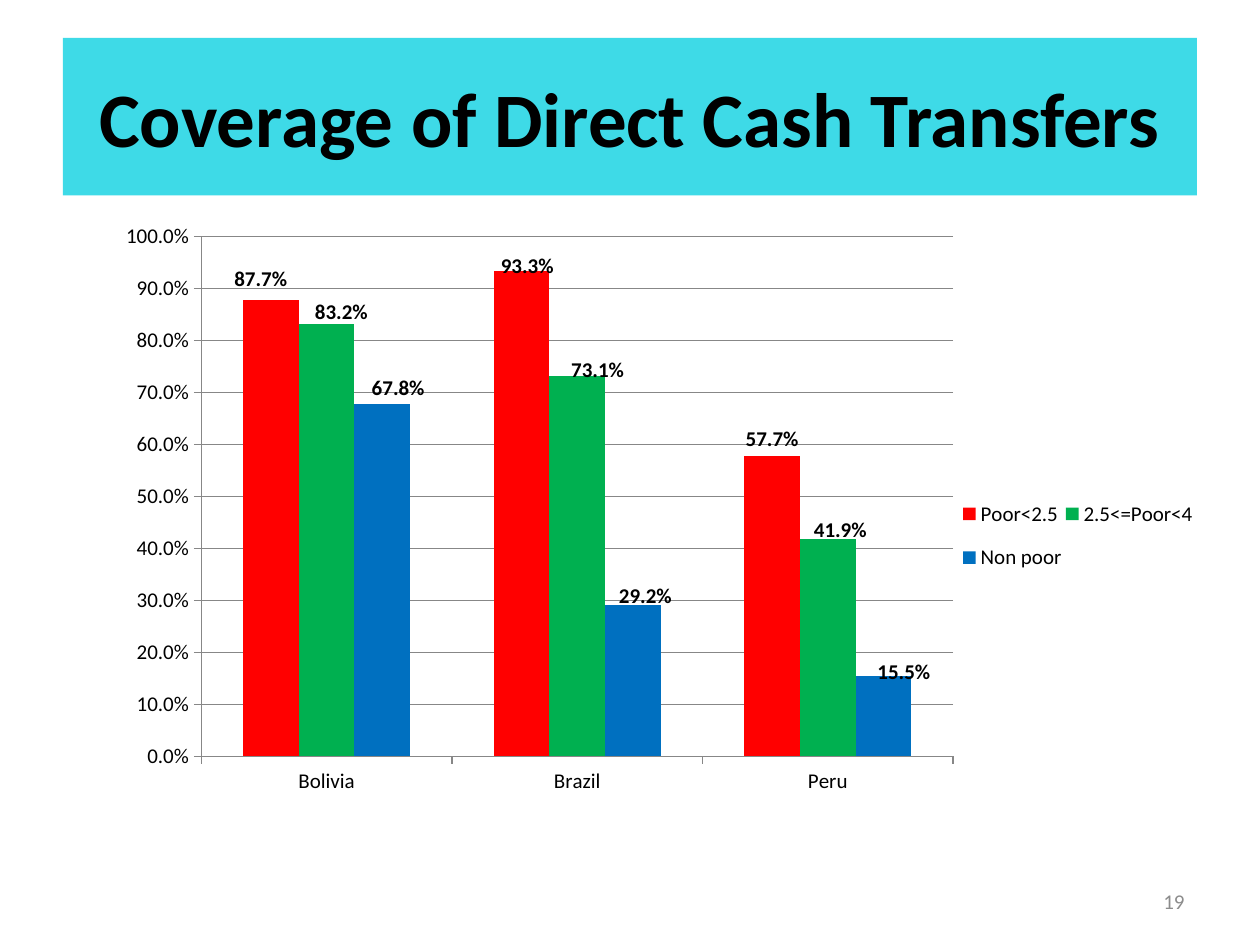
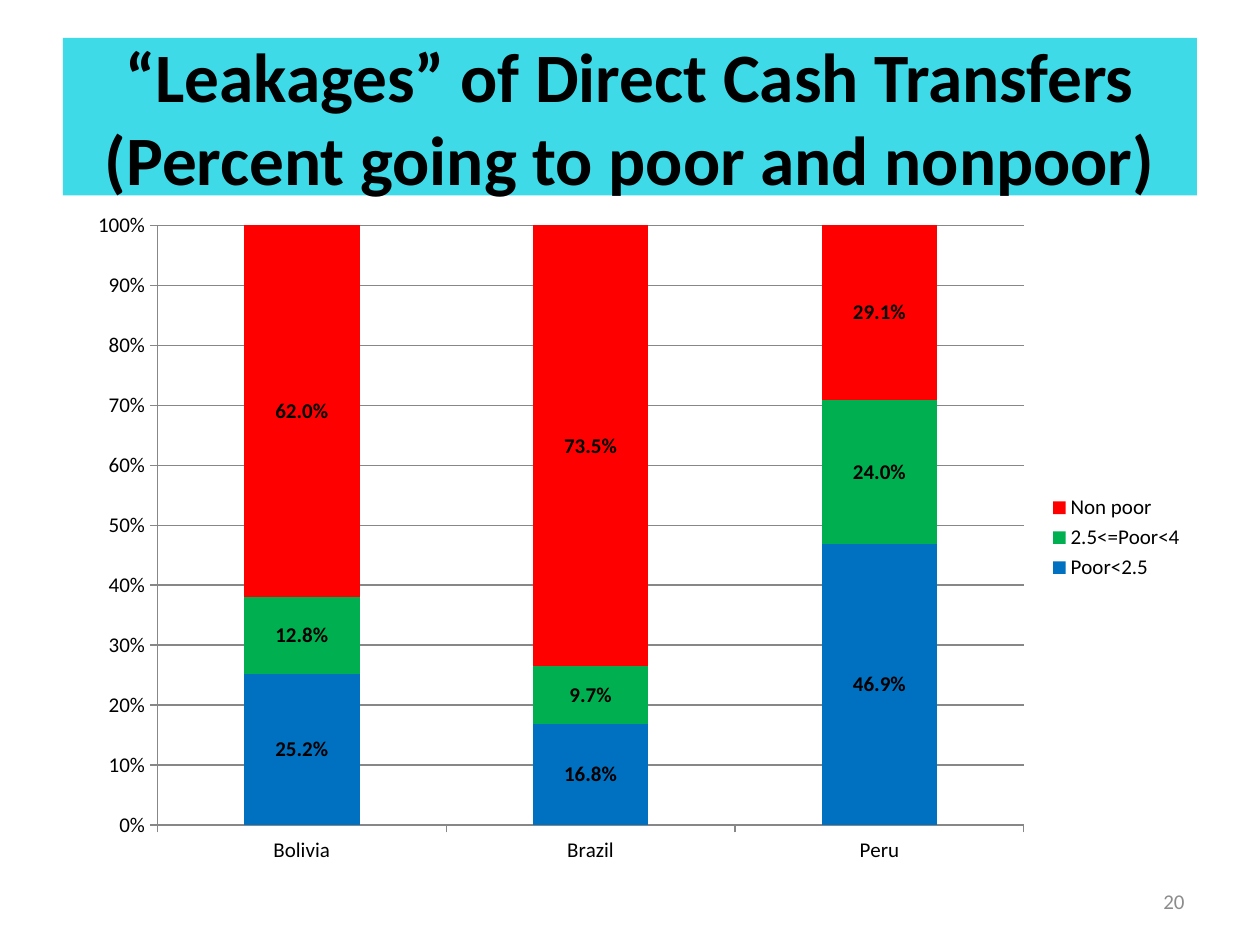
import pptx
import pptx.chart.data
import pptx.dml.color
import pptx.enum.chart
import pptx.enum.shapes
import pptx.enum.text
import pptx.oxml
import pptx.oxml.ns
import pptx.util
from dataclasses import dataclass

Pt = pptx.util.Pt
ALIGN = pptx.enum.text.PP_ALIGN
XL = pptx.enum.chart


@dataclass(frozen=True)
class Theme:
    font: str = "Calibri"
    band: str = "3EDAE7"
    ink: str = "000000"
    muted: str = "8C8C8C"
    line: str = "878787"
    red: str = "FF0000"
    green: str = "00B050"
    blue: str = "0070C0"
    title: float = 44
    title_small: float = 39.6
    small: float = 12


THEME = Theme()
COUNTRIES = ["Bolivia", "Brazil", "Peru"]


def rgb(value):
    return pptx.dml.color.RGBColor.from_string(value)


def apply(obj, **values):
    for name, value in values.items():
        setattr(obj, name, value)


def layout_xml(x, y, w=None, h=None, target=None, mode="edge"):
    """Manual chart layout; offsets only when mode is 'factor'."""
    parts = [("layoutTarget", target)]
    if mode == "edge":
        parts += [("xMode", mode), ("yMode", mode)]
    parts += [("x", x), ("y", y), ("w", w), ("h", h)]
    body = "".join(f'<c:{tag} val="{v}"/>' for tag, v in parts if v is not None)
    return pptx.oxml.parse_xml(f"<c:layout {pptx.oxml.ns.nsdecls('c')}>"
                               f"<c:manualLayout>{body}</c:manualLayout></c:layout>")


class Deck:
    def __init__(self, theme):
        self.theme = theme
        self.prs = pptx.Presentation()
        apply(self.prs, slide_width=Pt(720), slide_height=Pt(540))
        self.s = None

    def slide(self, title, size, number):
        self.s = self.prs.slides.add_slide(self.prs.slide_layouts[6])
        self.title(title, size)
        self.page_number(number)

    def font(self, font, size, color=None, bold=False):
        apply(font, name=self.theme.font, size=Pt(size), bold=bold)
        font.color.rgb = rgb(color or self.theme.ink)

    def text(self, sp, text, align, size, color, bold=False):
        tf = sp.text_frame
        apply(tf, word_wrap=True, vertical_anchor=pptx.enum.text.MSO_ANCHOR.MIDDLE)
        p = tf.paragraphs[0]
        apply(p, text=text, alignment=align)
        for r in p.runs:
            self.font(r.font, size, color, bold)

    def title(self, text, size):
        sp = self.s.shapes.add_shape(pptx.enum.shapes.MSO_SHAPE.RECTANGLE,
                                     Pt(36), Pt(21.6), Pt(648), Pt(90))
        sp.shadow.inherit = False
        sp.fill.solid()
        sp.fill.fore_color.rgb = rgb(self.theme.band)
        sp.line.fill.background()
        self.text(sp, text, ALIGN.CENTER, size, self.theme.ink, True)

    def page_number(self, number):
        sp = self.s.shapes.add_textbox(Pt(516), Pt(500.5), Pt(168), Pt(28.75))
        self.text(sp, str(number), ALIGN.RIGHT, self.theme.small, self.theme.muted)

    def chart(self, kind, box, series, axis_format):
        """Draw a column chart from (name, values, colour) rows."""
        data = pptx.chart.data.CategoryChartData(number_format="0.0%")
        data.categories = COUNTRIES
        for name, values, _ in series:
            data.add_series(name, values)
        chart = self.s.shapes.add_chart(kind, *map(Pt, box), data).chart
        chart.has_title = False
        self.font(chart.font, self.theme.small)

        # Axes and legend
        for axis in (chart.category_axis, chart.value_axis):
            apply(axis, major_tick_mark=XL.XL_TICK_MARK.OUTSIDE)
            self.line(axis.format.line)
            self.font(axis.tick_labels.font, self.theme.small)
        value = chart.value_axis
        apply(value, has_major_gridlines=True, minimum_scale=0, maximum_scale=1,
              major_unit=0.1)
        self.line(value.major_gridlines.format.line)
        apply(value.tick_labels, number_format=axis_format, number_format_is_linked=False)
        chart.has_legend = True
        apply(chart.legend, position=XL.XL_LEGEND_POSITION.RIGHT, include_in_layout=False)
        self.font(chart.legend.font, self.theme.small)

        # Columns and their labels
        plot = chart.plots[0]
        apply(plot, gap_width=150, vary_by_categories=False)
        for ser, (_, _, color) in zip(plot.series, series):
            ser.format.fill.solid()
            ser.format.fill.fore_color.rgb = rgb(color)
            labels = ser.data_labels
            apply(labels, show_value=True, number_format="0.0%",
                  number_format_is_linked=False)
            self.font(labels.font, self.theme.small, bold=True)
        return chart

    def line(self, line):
        line.width = Pt(0.75)
        line.color.rgb = rgb(self.theme.line)

    def place_plot(self, chart, *box):
        area = chart.plots[0]._element.getparent()
        for old in area.findall(pptx.oxml.ns.qn("c:layout")):
            area.remove(old)
        area.insert(0, layout_xml(*box, target="inner"))

    def place_legend(self, chart, *box):
        legend = chart.legend._element
        for old in legend.findall(pptx.oxml.ns.qn("c:layout")):
            legend.remove(old)
        legend.find(pptx.oxml.ns.qn("c:legendPos")).addnext(layout_xml(*box))

    def shift_labels(self, ser, shifts):
        """Nudge each label by a fraction of the chart size."""
        ser.data_labels.position = XL.XL_LABEL_POSITION.OUTSIDE_END
        for i, (dx, dy) in enumerate(shifts):
            label = ser.points[i].data_label
            self.font(label.font, self.theme.small, bold=True)
            label.position = XL.XL_LABEL_POSITION.OUTSIDE_END
            idx = ser.data_labels._element.findall(pptx.oxml.ns.qn("c:dLbl"))[i][0]
            idx.addnext(pptx.oxml.parse_xml(
                f'<c:numFmt {pptx.oxml.ns.nsdecls("c")} formatCode="0.0%" sourceLinked="0"/>'))
            idx.addnext(layout_xml(dx, dy, mode="factor"))


def main():
    deck = Deck(THEME)
    poor, middle, non_poor = "Poor<2.5", "2.5<=Poor<4", "Non poor"

    # Coverage by income group
    deck.slide("Coverage of Direct Cash Transfers", THEME.title, 19)
    chart = deck.chart(XL.XL_CHART_TYPE.COLUMN_CLUSTERED, (36, 120, 648, 380), [
        (poor, (0.877, 0.933, 0.577), THEME.red),
        (middle, (0.832, 0.731, 0.419), THEME.green),
        (non_poor, (0.678, 0.292, 0.155), THEME.blue),
    ], "0.0%")
    chart.plots[0].overlap = 0
    deck.place_plot(chart, 0.122, 0.04, 0.663, 0.782)
    deck.place_legend(chart, 0.79, 0.41, 0.21, 0.16)
    label_shifts = [
        [(-0.009, -0.006), (0.005, 0.018), (0, 0)],
        [(0.013, 0.009), (0.018, 0.017), (0.011, 0.013)],
        [(0.014, 0.003), (0.011, 0.013), (0.018, 0.02)],
    ]
    for ser, shifts in zip(chart.plots[0].series, label_shifts):
        deck.shift_labels(ser, shifts)

    # Leakages: share going to each group
    deck.slide("“Leakages” of Direct Cash Transfers\v(Percent going to poor and nonpoor)",
               THEME.title_small, 20)
    chart = deck.chart(XL.XL_CHART_TYPE.COLUMN_STACKED_100, (43.2, 114, 640.8, 386.5), [
        (poor, (0.252, 0.168, 0.469), THEME.blue),
        (middle, (0.128, 0.097, 0.24), THEME.green),
        (non_poor, (0.62, 0.735, 0.291), THEME.red),
    ], "0%")
    chart.plots[0].overlap = 100

    deck.prs.save("out.pptx")


if __name__ == "__main__":
    main()
